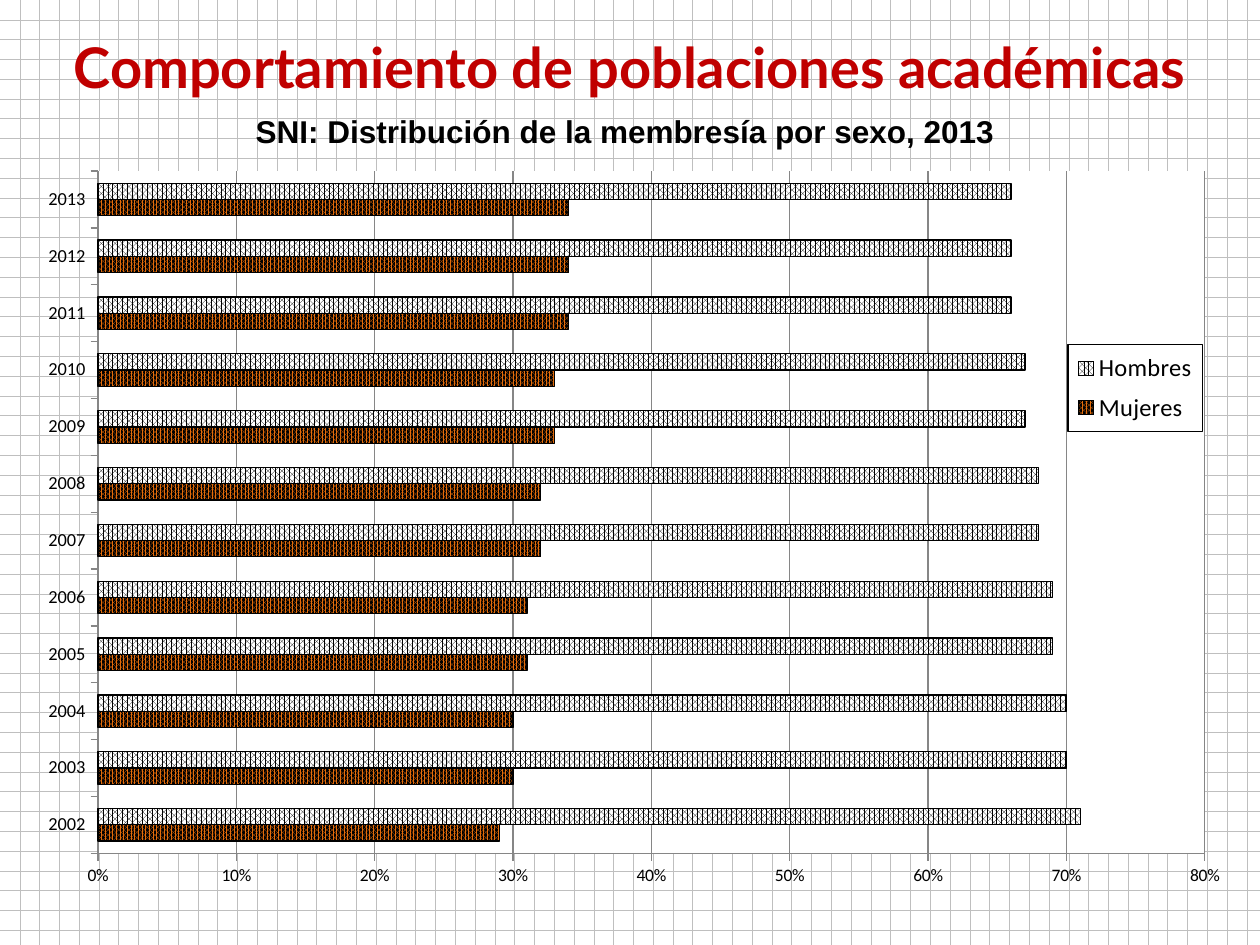
import pptx
import pptx.chart.data
import pptx.dml.color
import pptx.enum.chart
import pptx.enum.dml
import pptx.enum.text
import pptx.oxml
import pptx.oxml.ns
import pptx.util

Cm = pptx.util.Cm
Pt = pptx.util.Pt
PATTERN = pptx.enum.dml.MSO_PATTERN
QN = pptx.oxml.ns.qn

COLORS = {
    "title": "C00000",
    "ink": "000000",
    "paper": "FFFFFF",
    "mesh": "BFBFBF",
    "axis": "868686",
    "women": "E46C0A",
}
YEARS = [str(year) for year in range(2002, 2014)]
# name, values, pattern, foreground, background
SERIES = [
    ("Mujeres",
     (0.29, 0.3, 0.3, 0.31, 0.31, 0.32, 0.32, 0.33, 0.33, 0.34, 0.34, 0.34),
     PATTERN.PERCENT_80, "women", "ink"),
    ("Hombres",
     (0.71, 0.7, 0.7, 0.69, 0.69, 0.68, 0.68, 0.67, 0.67, 0.66, 0.66, 0.66),
     PATTERN.PERCENT_75, "ink", "paper"),
]


def color(name):
    return pptx.dml.color.RGBColor.from_string(COLORS[name])


def set_pattern(fill, pattern, front, back):
    fill.patterned()
    fill.pattern = pattern
    fill.fore_color.rgb = color(front)
    fill.back_color.rgb = color(back)


def set_font(font, size, name, ink="ink", bold=False):
    font.size = Pt(size)
    font.name = name
    font.bold = bold
    font.color.rgb = color(ink)


def add_heading(page, area, text, size, font_name, ink):
    box = page.shapes.add_textbox(*[Cm(length) for length in area])
    frame = box.text_frame
    frame.word_wrap = True
    frame.vertical_anchor = pptx.enum.text.MSO_ANCHOR.MIDDLE
    para = frame.paragraphs[0]
    para.alignment = pptx.enum.text.PP_ALIGN.CENTER
    span = para.add_run()
    span.text = text
    set_font(span.font, size, font_name, ink, bold=True)


def chart_part(body):
    return pptx.oxml.parse_xml(body.replace(
        ">", f" {pptx.oxml.ns.nsdecls('c', 'a')}>", 1))


def manual_layout(x, y, width, height, inner=False):
    """Layout in fractions of the chart's box."""
    target = '<c:layoutTarget val="inner"/>' if inner else ""
    return chart_part(
        f'<c:layout><c:manualLayout>{target}<c:xMode val="edge"/><c:yMode val="edge"/>'
        f'<c:x val="{x}"/><c:y val="{y}"/><c:w val="{width}"/><c:h val="{height}"/>'
        '</c:manualLayout></c:layout>')


def solid_box(line=None):
    outline = (f'<a:solidFill><a:srgbClr val="{COLORS[line]}"/></a:solidFill>'
               if line else "<a:noFill/>")
    return chart_part(
        f'<c:spPr><a:solidFill><a:srgbClr val="{COLORS["paper"]}"/></a:solidFill>'
        f'<a:ln w="9525">{outline}</a:ln></c:spPr>')


def drop_layout(parent):
    for layout in parent.findall(QN("c:layout")):
        parent.remove(layout)


def style_axes(chart):
    for axis, size in ((chart.category_axis, 10.5), (chart.value_axis, 10)):
        axis.major_tick_mark = pptx.enum.chart.XL_TICK_MARK.OUTSIDE
        axis.minor_tick_mark = pptx.enum.chart.XL_TICK_MARK.NONE
        axis.format.line.color.rgb = color("axis")
        set_font(axis.tick_labels.font, size, "Calibri")
    chart.category_axis.has_major_gridlines = False
    values = chart.value_axis
    values.minimum_scale, values.maximum_scale, values.major_unit = 0, 0.8, 0.1
    values.has_major_gridlines = True
    values.major_gridlines.format.line.color.rgb = color("axis")
    values.tick_labels.number_format = "0%"
    values.tick_labels.number_format_is_linked = False


def style_legend(chart):
    chart.has_legend = True
    legend = chart.legend
    legend.position = pptx.enum.chart.XL_LEGEND_POSITION.RIGHT
    legend.include_in_layout = True
    set_font(legend.font, 14, "Calibri")
    element = legend._element
    drop_layout(element)
    overlay = element.find(QN("c:overlay"))
    overlay.addprevious(manual_layout(0.855, 0.253, 0.11, 0.117))
    overlay.addnext(solid_box("ink"))


def add_members_chart(page, area):
    data = pptx.chart.data.CategoryChartData(number_format="0%")
    data.categories = YEARS
    for name, values, *_ in SERIES:
        data.add_series(name, values)
    chart = page.shapes.add_chart(
        pptx.enum.chart.XL_CHART_TYPE.BAR_CLUSTERED,
        *[Cm(length) for length in area], data).chart
    chart.has_title = False
    set_font(chart.font, 10, "Calibri")

    # Bars
    plot = chart.plots[0]
    plot.gap_width = 150
    plot.overlap = 0
    plot.vary_by_categories = False
    for series, (_, _, pattern, front, back) in zip(plot.series, SERIES):
        set_pattern(series.format.fill, pattern, front, back)
        series.format.line.color.rgb = color("ink")
        series.format.line.width = Pt(0.75)
        series.invert_if_negative = False

    style_axes(chart)
    style_legend(chart)

    # White plot area
    plot_area = chart._chartSpace.chart.plotArea
    drop_layout(plot_area)
    plot_area.insert(0, manual_layout(0.06, 0.02, 0.907, 0.917, inner=True))
    plot_area.append(solid_box())


def main():
    deck = pptx.Presentation()
    deck.slide_width, deck.slide_height = Cm(25.4), Cm(19.05)
    page = deck.slides.add_slide(deck.slide_layouts[6])
    set_pattern(page.background.fill, PATTERN.DOTTED_GRID, "mesh", "paper")

    add_heading(page, (0.3, 0.53, 24.8, 1.6),
                "Comportamiento de poblaciones académicas", 32, "Lato", "title")
    add_heading(page, (3.1, 2.13, 19, 1.02),
                "SNI: Distribución de la membresía por sexo, 2013", 18, "Arial", "ink")
    add_members_chart(page, (0.5, 3.15, 24.6, 15))
    deck.save("out.pptx")


if __name__ == "__main__":
    main()
